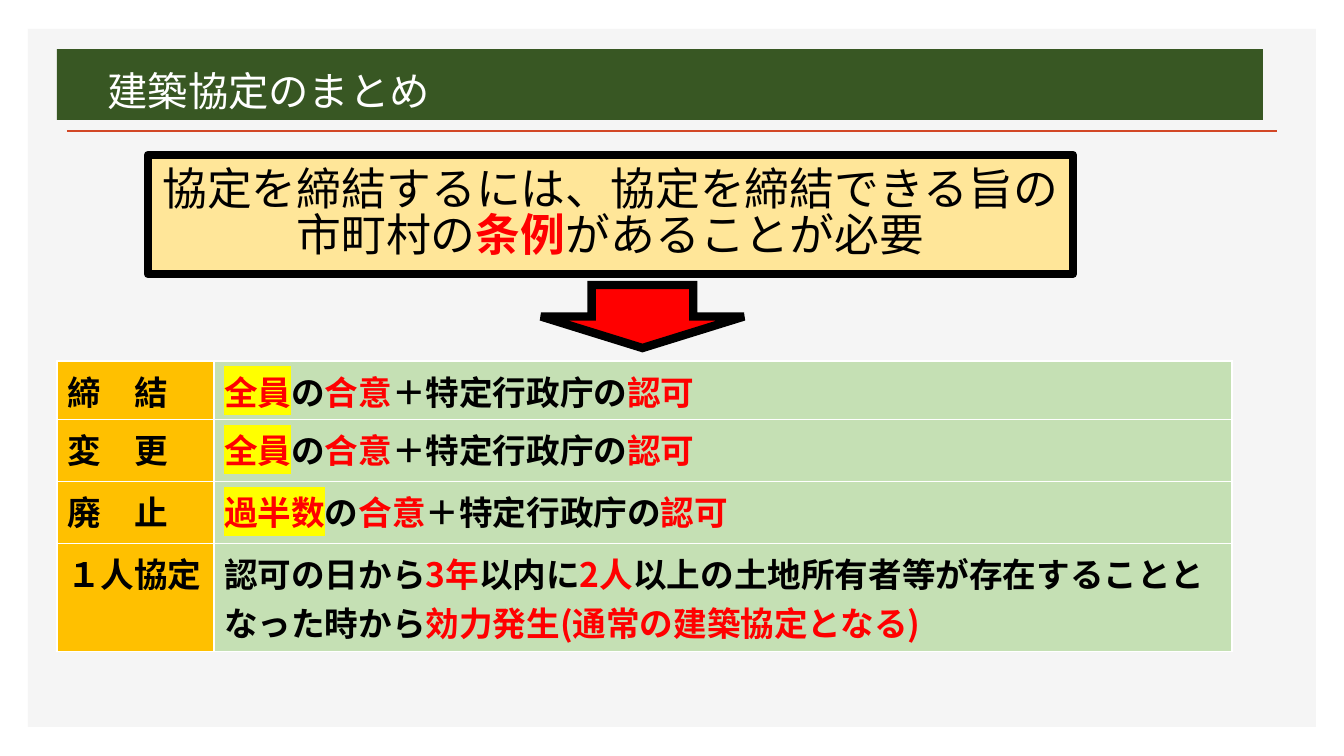
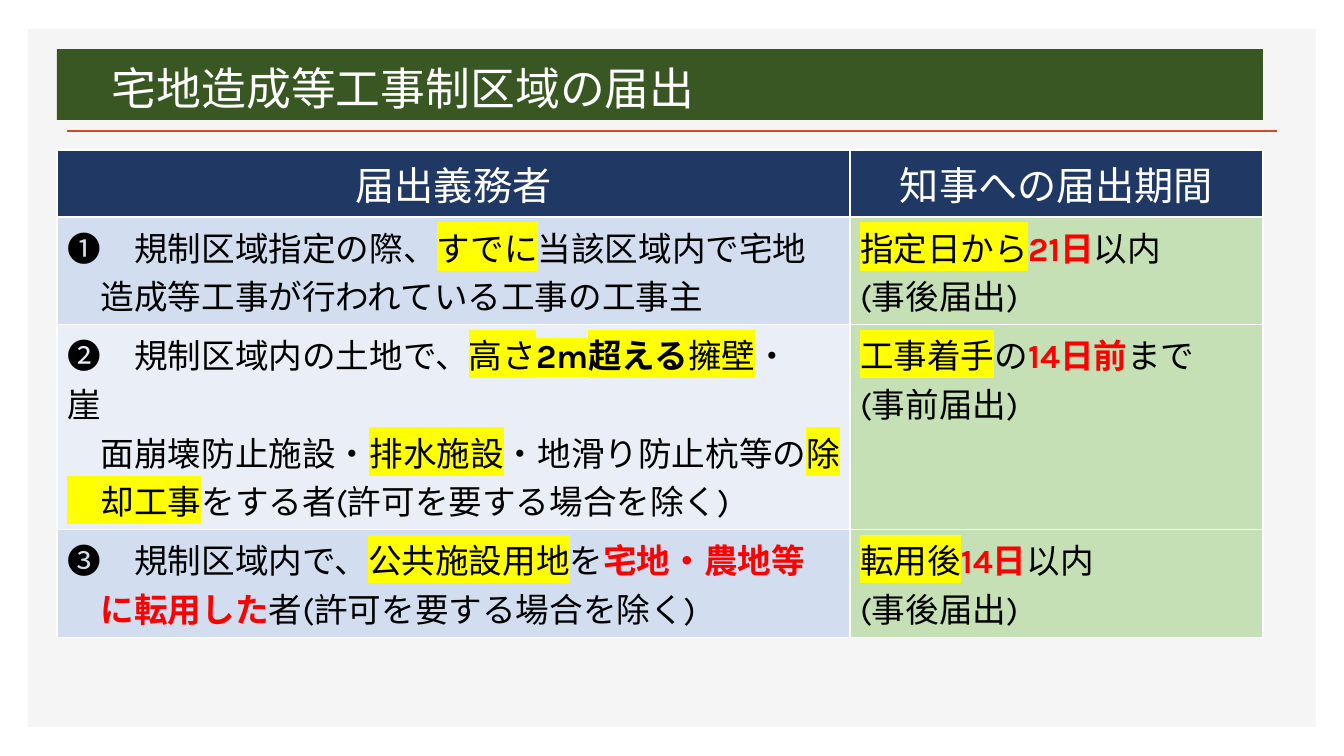
from pptx import Presentation, util as u
from pptx.dml.color import RGBColor
from pptx.enum import shapes, text
from pptx.oxml import parse_xml
from pptx.oxml.ns import nsdecls, qn

PX = 914400 / 100.8
LATIN, CJK = "Karla", "Noto Sans CJK JP"
BLACK, WHITE, RED, YELLOW = "000000", "FFFFFF", "FF0000", "FFFF00"
PANEL, RULE, BAND = "F5F5F5", "D24726", "385723"
GOLD, CREAM, GREEN, NAVY = "FFC000", "FFE699", "C5E0B4", "203864"
BLUE, PALE = "D2DEEF", "EAEFF7"


def px(n):
    return u.Emu(round(n * PX))


def rgb(value):
    return RGBColor.from_string(value)


def element(tag, attrs="", inner=""):
    return parse_xml(f"<a:{tag} {nsdecls('a')} {attrs}>{inner}</a:{tag}>")


def solid(color):
    return f'<a:solidFill><a:srgbClr val="{color}"/></a:solidFill>'


# Text: a paragraph is a list of (text, marks); marks: r red, b bold, h highlight
def write(tf, paragraphs, size, color=BLACK, font=LATIN, bold=False,
          align=text.PP_ALIGN.LEFT, spacing=None):
    for i, runs in enumerate(paragraphs):
        p = tf.add_paragraph() if i else tf.paragraphs[0]
        p.alignment = align
        if spacing:
            p.line_spacing = spacing
        f = p.font
        f.size, f.name, f.bold = u.Pt(size), font, bold
        f.color.rgb = rgb(color)
        f._element.append(element("ea", f'typeface="{CJK}"'))
        for words, marks in runs:
            r = p.add_run()
            r.text = words
            if "b" in marks:
                r.font.bold = True
            if "r" in marks:
                r.font.color.rgb = rgb(RED)
            if "h" in marks:
                r._r.get_or_add_rPr().append(
                    element("highlight", "", f'<a:srgbClr val="{YELLOW}"/>'))


def add_box(s, kind, x, y, w, h, fill, border=None):
    sp = s.shapes.add_shape(kind, px(x), px(y), px(w), px(h))
    sp.shadow.inherit = False
    sp.fill.solid()
    sp.fill.fore_color.rgb = rgb(fill)
    if border:
        sp.line.color.rgb = rgb(border)
        sp.line.width = u.Pt(6)
    else:
        sp.line.fill.background()
    return sp


# Shared frame: grey panel, title band and rule
def add_framed_slide(prs, title, size):
    s = prs.slides.add_slide(prs.slide_layouts[6])
    rect = shapes.MSO_SHAPE.RECTANGLE
    add_box(s, rect, 28, 29, 1288, 698, PANEL)
    rule = s.shapes.add_connector(shapes.MSO_CONNECTOR.STRAIGHT,
                                  px(67), px(131), px(1277), px(131))
    rule.line.color.rgb = rgb(RULE)
    rule.line.width = u.Pt(2)
    rule._element.spPr.append(element("effectLst"))
    band = add_box(s, rect, 57, 49, 1206, 71, BAND)
    tf = band.text_frame
    tf.word_wrap = True
    tf.vertical_anchor = text.MSO_ANCHOR.BOTTOM
    # Inset the title by one character
    tf.margin_left = u.Inches(0.1) + u.Pt(size)
    write(tf, [[(title, "")]], size, WHITE, CJK, spacing=0.9)
    return s


def style_cell(cell, fill):
    cell.fill.solid()
    cell.fill.fore_color.rgb = rgb(fill)
    tcPr = cell._tc.get_or_add_tcPr()
    for i, side in enumerate(("lnL", "lnR", "lnT", "lnB")):
        tcPr.insert(i, element(side, 'w="12700"', solid(WHITE)))


def add_grid(s, x, y, widths, heights):
    table = s.shapes.add_table(len(heights), len(widths), px(x), px(y),
                               px(sum(widths)), px(sum(heights))).table
    table.first_row = table.horz_banding = False
    for column, w in zip(table.columns, widths):
        column.width = px(w)
    for row, h in zip(table.rows, heights):
        row.height = px(h)
    return table


def fill_row(table, row, contents, fills, **style):
    for col, (paragraphs, fill) in enumerate(zip(contents, fills)):
        cell = table.cell(row, col)
        style_cell(cell, fill)
        write(cell.text_frame, paragraphs, **style)


def agreement_slide(prs):
    s = add_framed_slide(prs, "建築協定のまとめ", 28.8)

    # Agreement procedures
    def consent(who):
        return [(who, "rh"), ("の", ""), ("合意", "r"),
                ("＋特定行政庁の", ""), ("認可", "r")]

    single = [("認可の日から", ""), ("3年", "r"), ("以内に", ""), ("2人", "r"),
              ("以上の土地所有者等が存在することとなった時から", ""),
              ("効力発生(通常の建築協定となる)", "r")]
    rows = [("締　結", consent("全員")), ("変　更", consent("全員")),
            ("廃　止", consent("過半数")), ("１人協定", single)]
    table = add_grid(s, 57, 361, (157, 1018), (58, 62, 62, 107))
    for i, (label, runs) in enumerate(rows):
        fill_row(table, i, ([[(label, "")]], [runs]), (GOLD, GREEN),
                 size=24, font=CJK, bold=True)

    # Precondition and arrow
    box = add_box(s, shapes.MSO_SHAPE.RECTANGLE, 148, 155, 925, 119, CREAM, BLACK)
    box.text_frame.word_wrap = False
    write(box.text_frame,
          [[("協定を締結するには、協定を締結できる旨の", "")],
           [("市町村の", ""), ("条例", "rb"), ("があることが必要", "")]],
          32, align=text.PP_ALIGN.CENTER, spacing=0.85)
    arrow = add_box(s, shapes.MSO_SHAPE.DOWN_ARROW, 541, 285, 203, 63, RED, BLACK)
    arrow._element.spPr.find(qn("a:ln")).append(element("miter", 'lim="800000"'))


def notification_slide(prs):
    s = add_framed_slide(prs, "宅地造成等工事制区域の届出", 32)
    table = add_grid(s, 57, 150, (793, 413), (67, 107, 205, 107))
    fill_row(table, 0, ([[("届出義務者", "")]], [[("知事への届出期間", "")]]),
             (NAVY, NAVY), size=28, color=WHITE, align=text.PP_ALIGN.CENTER)

    # Who notifies, and by when
    rows = [
        ([[("❶　規制区域指定の際、", ""), ("すでに", "h"), ("当該区域内で宅地", "")],
          [("　造成等工事が行われている工事の工事主", "")]],
         [[("指定日から", "h"), ("21日", "rb"), ("以内", "")],
          [("(事後届出)", "")]]),
        ([[("❷　規制区域内の土地で、", ""), ("高さ", "h"), ("2m超える", "bh"),
           ("擁壁", "h"), ("・崖　", "")],
          [("　面崩壊防止施設・", ""), ("排水施設", "h"),
           ("・地滑り防止杭等の", ""), ("除", "h")],
          [("　却工事", "h"), ("をする者(許可を要する場合を除く)", "")]],
         [[("工事着手", "h"), ("の", ""), ("14日前", "rb"), ("まで", "")],
          [("(事前届出)", "")]]),
        ([[("❸　規制区域内で、", ""), ("公共施設用地", "h"), ("を", ""),
           ("宅地・農地等", "rb")],
          [("　に転用した", "rb"), ("者(許可を要する場合を除く)", "")]],
         [[("転用後", "h"), ("14日", "rb"), ("以内", "")],
          [("(事後届出)", "")]]),
    ]
    for i, contents in enumerate(rows, 1):
        fill_row(table, i, contents, (BLUE if i % 2 else PALE, GREEN), size=24)


def main():
    prs = Presentation()
    prs.slide_width, prs.slide_height = px(1344), px(756)
    agreement_slide(prs)
    notification_slide(prs)
    prs.save("out.pptx")


if __name__ == "__main__":
    main()
